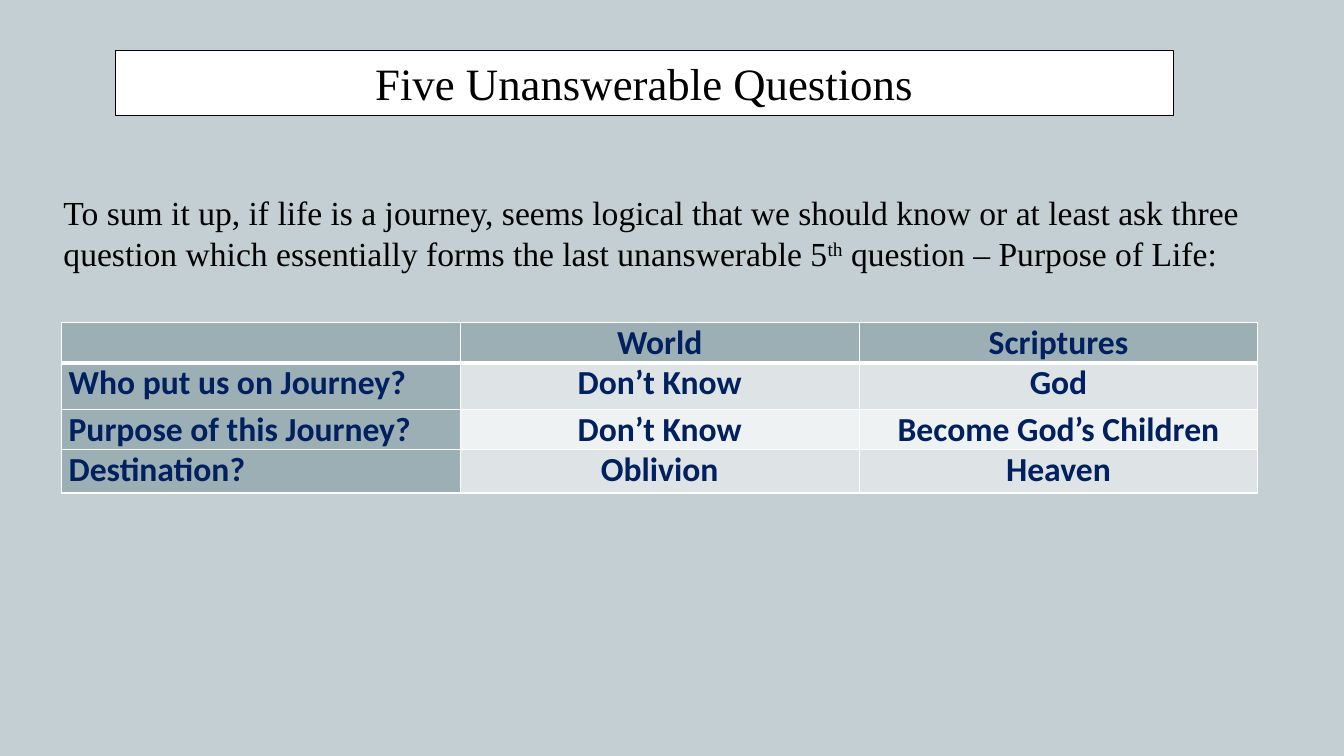
import pptx
import pptx.util
import pptx.dml.color
import pptx.enum.text
from lxml import etree
from pptx.oxml.ns import qn

Cm, Pt = pptx.util.Cm, pptx.util.Pt
ALIGN = pptx.enum.text.PP_ALIGN
ANCHOR = pptx.enum.text.MSO_ANCHOR

TITLE = "Five Unanswerable Questions"
INTRO = [
    ("To sum it up, if life is a journey, seems logical that we should know or at "
     "least ask three question which essentially forms the last unanswerable 5", False),
    ("th", True),
    (" question – Purpose of Life:", False),
]
ANSWERS = [
    ("", "World", "Scriptures"),
    ("Who put us on Journey?", "Don’t Know", "God"),
    ("Purpose of this Journey?", "Don’t Know", "Become God’s Children"),
    ("Destination?", "Oblivion", "Heaven"),
]
ROW_HEIGHTS = (0.9, 1.17, 0.9, 1.09)
COLUMN_WIDTH = 10.05
SERIF, SANS = "Times New Roman", "Calibri"
BACKGROUND, BLACK, WHITE, NAVY = "C3CFD3", "000000", "FFFFFF", "002060"
HEADING_FILL, BAND_FILLS = "9BAFB5", ("EFF2F3", "DEE3E5")


def color(hex_code):
    return pptx.dml.color.RGBColor.from_string(hex_code)


def paint(fill, hex_code):
    fill.solid()
    fill.fore_color.rgb = color(hex_code)


def add_run(paragraph, text, font_name, size, hex_code, bold=False):
    run = paragraph.add_run()
    run.text = text
    run.font.name = font_name
    run.font.size = Pt(size)
    run.font.bold = bold
    run.font.color.rgb = color(hex_code)
    return run


def add_borders(cell, widths):
    """Draw white cell edges; widths maps L, R, T and B to points."""
    properties = cell._tc.get_or_add_tcPr()
    for side, width in widths.items():
        edge = etree.SubElement(properties, qn("a:ln" + side), w=str(Pt(width)))
        edge_fill = etree.SubElement(edge, qn("a:solidFill"))
        etree.SubElement(edge_fill, qn("a:srgbClr"), val=WHITE)


def add_title(slide):
    title = slide.shapes.title
    title.left, title.top, title.width, title.height = Cm(2.9), Cm(1.27), Cm(26.67), Cm(1.63)
    paint(title.fill, WHITE)
    title.line.color.rgb = color(BLACK)
    title.line.width = Pt(0.75)
    frame = title.text_frame
    frame.auto_size = pptx.enum.text.MSO_AUTO_SIZE.NONE
    frame.vertical_anchor = ANCHOR.MIDDLE
    frame.paragraphs[0].alignment = ALIGN.CENTER
    add_run(frame.paragraphs[0], TITLE, SERIF, 32, BLACK)


def add_intro(slide):
    intro = slide.shapes.add_textbox(Cm(1.35), Cm(4.72), Cm(30.33), Cm(2.35))
    intro.text_frame.word_wrap = True
    for text, raised in INTRO:
        run = add_run(intro.text_frame.paragraphs[0], text, SERIF, 24, BLACK)
        if raised:
            run._r.get_or_add_rPr().set("baseline", "30000")


def add_answers(slide):
    columns = len(ANSWERS[0])
    answers = slide.shapes.add_table(
        len(ANSWERS), columns, Cm(1.55), Cm(8.13),
        Cm(columns * COLUMN_WIDTH), Cm(sum(ROW_HEIGHTS))).table
    for column in answers.columns:
        column.width = Cm(COLUMN_WIDTH)
    for r, (height, texts) in enumerate(zip(ROW_HEIGHTS, ANSWERS)):
        answers.rows[r].height = Cm(height)
        for c, text in enumerate(texts):
            cell = answers.cell(r, c)
            cell.margin_left = cell.margin_right = Cm(0.18)
            cell.margin_top = cell.margin_bottom = 0
            add_borders(cell, {"L": 1, "R": 1, "T": 3 if r == 1 else 1, "B": 3 if r == 0 else 1})
            paint(cell.fill, HEADING_FILL if r == 0 or c == 0 else BAND_FILLS[r % 2])
            paragraph = cell.text_frame.paragraphs[0]
            paragraph.alignment = ALIGN.CENTER if c else ALIGN.LEFT
            if text:
                add_run(paragraph, text, SANS, 24, NAVY, bold=True)


def main():
    deck = pptx.Presentation()
    deck.slide_width, deck.slide_height = Cm(33.87), Cm(19.05)
    slide = deck.slides.add_slide(deck.slide_layouts[5])
    paint(slide.background.fill, BACKGROUND)
    add_title(slide)
    add_intro(slide)
    add_answers(slide)
    deck.save("out.pptx")


if __name__ == "__main__":
    main()
